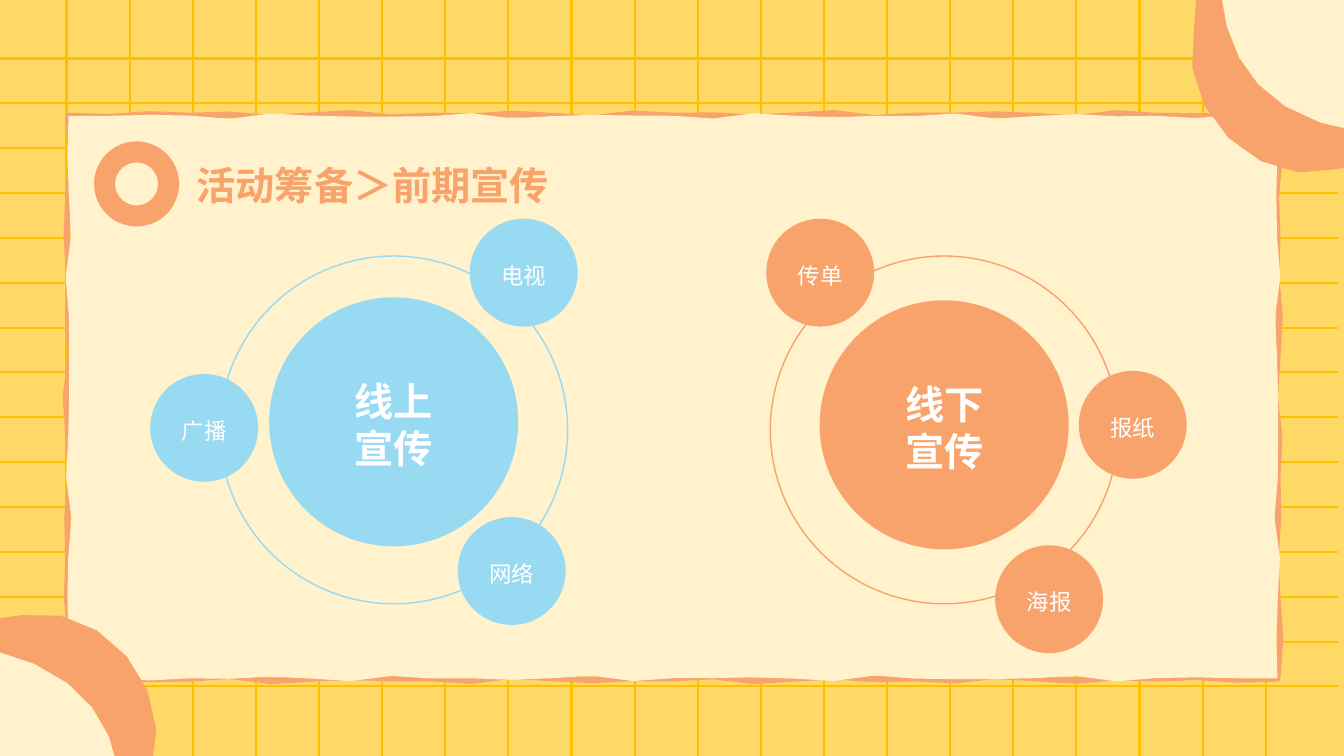
from math import pi, sin

from lxml import etree
from pptx import Presentation
from pptx.dml.color import RGBColor
from pptx.enum.shapes import MSO_CONNECTOR, MSO_SHAPE
from pptx.enum.text import MSO_ANCHOR, PP_ALIGN
from pptx.oxml.ns import qn
from pptx.util import Inches, Pt

STRAIGHT = MSO_CONNECTOR.STRAIGHT
OVAL, DONUT = MSO_SHAPE.OVAL, MSO_SHAPE.DONUT
MIDDLE = MSO_ANCHOR.MIDDLE
LEFT, CENTER = PP_ALIGN.LEFT, PP_ALIGN.CENTER
YELLOW, GOLD, CREAM = "FFD966", "FFC000", "FFF2CC"
ORANGE, BLUE, WHITE = "F8A36C", "97DAF1", "FFFFFF"


def paint(shape, fill=None, line=None, width=1):
    shape.shadow.inherit = False
    for target, color in ((shape.fill, fill), (shape.line.fill, line)):
        if color:
            target.solid()
            target.fore_color.rgb = RGBColor.from_string(color)
        else:
            target.background()
    if line:
        shape.line.width = Pt(width)


def write(shape, text, color, font_format, alignment, spacing, top_inset):
    frame = shape.text_frame
    frame_format = {"word_wrap": True, "vertical_anchor": MIDDLE, "margin_left": 0,
                    "margin_right": 0, "margin_top": Inches(top_inset), "margin_bottom": 0}
    for name, value in frame_format.items():
        setattr(frame, name, value)
    frame.text = text
    for paragraph in frame.paragraphs:
        paragraph.alignment = alignment
        paragraph.line_spacing = spacing
        for name, value in font_format.items():
            setattr(paragraph.font, name, value)
        paragraph.font.color.rgb = RGBColor.from_string(color)


presentation = Presentation()
presentation.slide_width = Inches(13.33)
presentation.slide_height = Inches(7.5)
slide = presentation.slides.add_slide(presentation.slide_layouts[6])
shapes = slide.shapes
slide.background.fill.solid()
slide.background.fill.fore_color.rgb = RGBColor.from_string(YELLOW)

grid = [(0.66 + 0.626 * i, 0, 0.66 + 0.626 * i, 7.5) for i in range(20)]
grid += [(13.27, 0.58 + 0.445 * i, 0, 0.58 + 0.445 * i) for i in range(15)]
grid_group = shapes.add_group_shape()
for ends in grid:
    grid_line = grid_group.shapes.add_connector(STRAIGHT, *[Inches(value) for value in ends])
    grid_line.line.color.rgb = RGBColor.from_string(GOLD)
    grid_line.line.width = Pt(1.5)
    etree.SubElement(grid_line._element.spPr, qn("a:effectLst"))

outlines = []
corners = [(0.68, 1.15), (12.67, 1.15), (12.67, 6.73), (0.68, 6.73)]
for phase, style in ((0, (None, ORANGE, 4.5)), (2, (CREAM,))):
    points = []
    for side, (x1, y1) in enumerate(corners):
        x2, y2 = corners[(side + 1) % 4]
        length = abs(x2 - x1) + abs(y2 - y1)
        steps = round(length / 0.4)
        for step in range(steps):
            part = step / steps
            distance = part * length
            wave = 0.016 * (sin(4 * distance + phase) + sin(6.5 * distance + 2 * phase))
            wave *= min(1, 5 * sin(pi * part))
            points.append((x1 + (x2 - x1) * part + wave * (side % 2),
                           y1 + (y2 - y1) * part + wave * (1 - side % 2)))
    outlines.append((points, style))

blobs = [
    (ORANGE, (11.85, 0.26), [
        ((11.81, -0.74), (12.46, -0.95), (13.27, -1.16)),
        ((14.03, -1.12), (14.65, -0.38), (14.68, 0.26)),
        ((14.69, 1.01), (14.2, 1.52), (13.27, 1.67)),
        ((12.49, 1.9), (11.65, 1.1), (11.85, 0.26))]),
    (CREAM, (12.11, -0.1), [
        ((12.08, -0.87), (12.72, -1.58), (13.53, -1.52)),
        ((14.31, -1.56), (15.06, -0.98), (14.95, -0.1)),
        ((15.12, 0.6), (14.33, 1.12), (13.53, 1.31)),
        ((12.57, 1.17), (12.18, 0.65), (12.11, -0.1))]),
    (ORANGE, (1.49, 7.65), [
        ((1.43, 8.65), (0.77, 8.79), (-0.06, 8.93)),
        ((-0.82, 8.82), (-1.37, 8.03), (-1.34, 7.39)),
        ((-1.27, 6.64), (-0.74, 6.17), (0.21, 6.11)),
        ((1.01, 5.96), (1.76, 6.83), (1.49, 7.65))]),
    (CREAM, (1.19, 7.99), [
        ((1.15, 8.76), (0.45, 9.41), (-0.35, 9.27)),
        ((-1.13, 9.24), (-1.82, 8.59), (-1.63, 7.72)),
        ((-1.74, 7.01), (-0.91, 6.56), (-0.09, 6.45)),
        ((0.86, 6.68), (1.2, 7.24), (1.19, 7.99))]),
]
for color, start, curves in blobs:
    points = []
    for curve in curves:
        for step in range(6):
            t = step / 6
            weights = ((1 - t) ** 3, 3 * t * (1 - t) ** 2, 3 * t ** 2 * (1 - t), t ** 3)
            points.append(tuple(sum(weight * point[axis]
                                    for weight, point in zip(weights, (start, *curve)))
                                for axis in (0, 1)))
        start = curve[-1]
    outlines.append((points, (color, color)))

for points, style in outlines:
    vertices = [(Inches(x), Inches(y)) for x, y in points]
    builder = shapes.build_freeform(*vertices[0])
    builder.add_line_segments(vertices[1:], close=True)
    paint(builder.convert_to_shape(), *style)

donut = shapes.add_shape(DONUT, Inches(0.94), Inches(1.41), Inches(0.83), Inches(0.83))
donut.adjustments[0] = 0.235
paint(donut, ORANGE, ORANGE)

core_font = {"name": "Calibri", "size": Pt(28), "bold": True}
title = shapes.add_textbox(Inches(1.95), Inches(1.43), Inches(5.38), Inches(0.86))
write(title, "活动筹备＞前期宣传", ORANGE, core_font, LEFT, 0.9, 0)

clusters = [
    (BLUE, "Calibri", (2.18, 2.54), (2.67, 2.95, "线上\n宣传"),
     [(1.49, 3.71, "广播"), (4.66, 2.17, "电视"), (4.54, 5.13, "网络")]),
    (ORANGE, "Arial", (7.64, 2.54), (8.13, 2.98, "线下\n宣传"),
     [(7.6, 2.17, "传单"), (10.7, 3.68, "报纸"), (9.87, 5.41, "海报")]),
]
for color, font_name, (ring_left, ring_top), core, channels in clusters:
    ring = shapes.add_shape(OVAL, Inches(ring_left), Inches(ring_top), Inches(3.45), Inches(3.45))
    paint(ring, line=color)
    channel_font = {"name": font_name, "size": Pt(16)}
    circles = [(core, 2.47, core_font)]
    circles += [(channel, 1.07, channel_font) for channel in channels]
    for (left, top, label), size, font_format in circles:
        circle = shapes.add_shape(OVAL, Inches(left), Inches(top), Inches(size), Inches(size))
        paint(circle, color)
        write(circle, label, WHITE, font_format, CENTER, 1.0, 0.05)

presentation.save("out.pptx")
